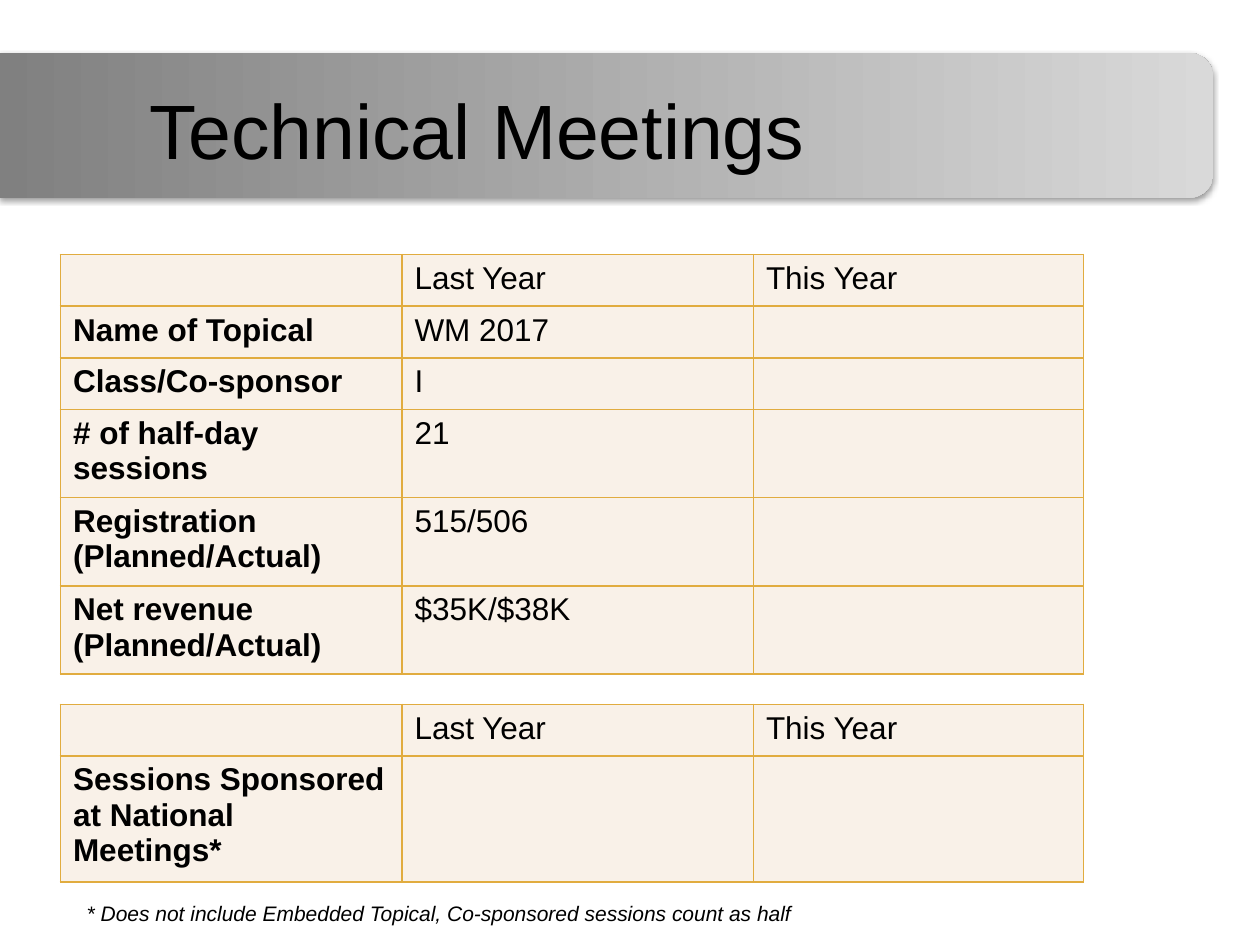
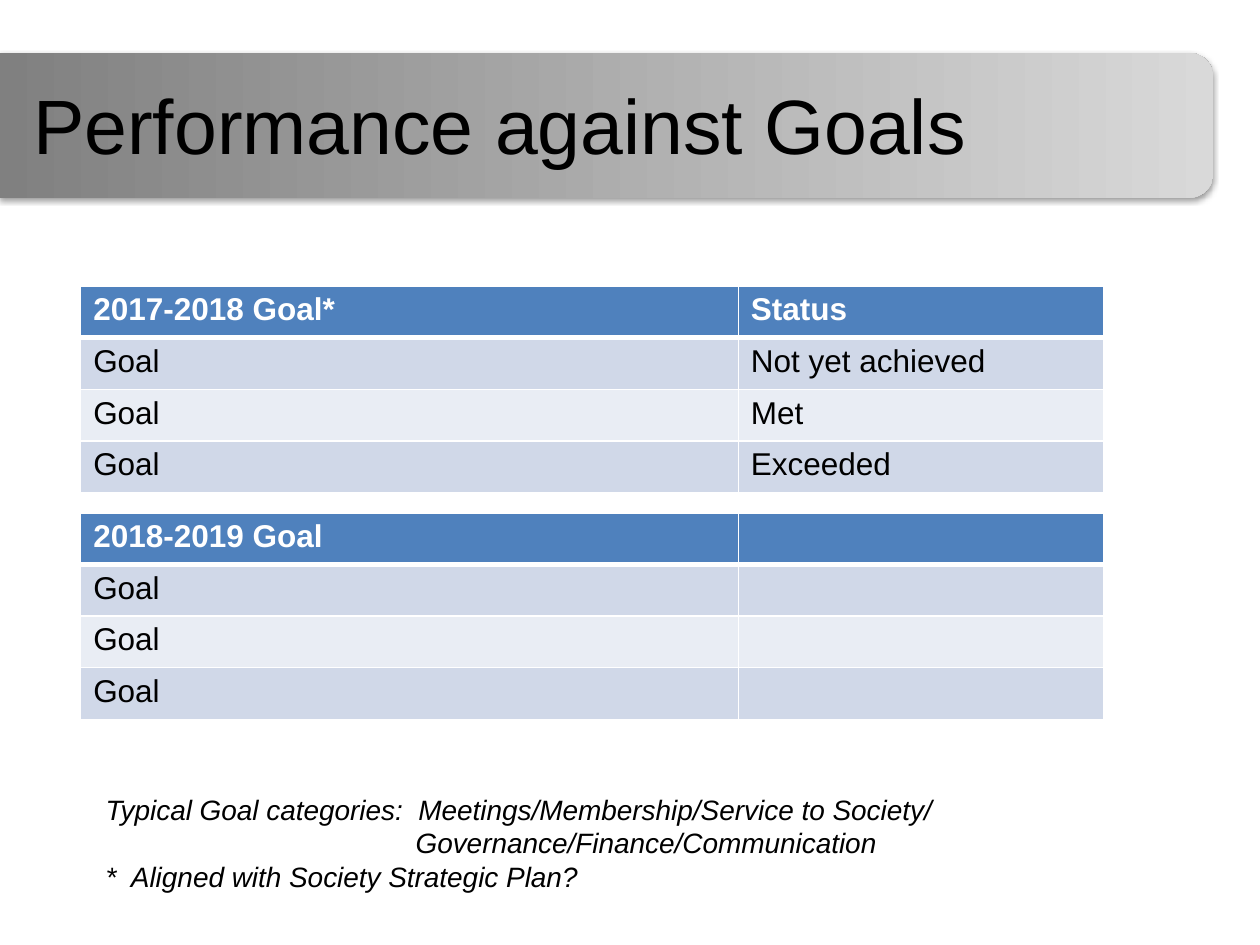
from lxml import etree
from pptx import Presentation
from pptx.dml.color import RGBColor
from pptx.enum.shapes import MSO_SHAPE
from pptx.enum.text import MSO_ANCHOR, MSO_AUTO_SIZE, PP_ALIGN
from pptx.oxml import parse_xml
from pptx.oxml.ns import nsdecls, qn
from pptx.util import Inches, Pt

COLORS = {
    "text": "000000", "white": "FFFFFF",
    "band_dark": "808080", "band_light": "D9D9D9",
    "cream": "F9F1E8", "gold": "E1AC3F",
    "header": "4F81BD", "row_odd": "D0D8E8", "row_even": "E9EDF4",
}
FONT = "Arial"
ROW_HEIGHT = 0.41


def style_text(frame, size, color="text", bold=False, italic=False):
    for paragraph in frame.paragraphs:
        for run in paragraph.runs:
            run.font.name = FONT
            run.font.size = Pt(size)
            run.font.bold = bold
            run.font.italic = italic
            run.font.color.rgb = RGBColor.from_string(COLORS[color])


def style_cell(cell, fill, border, top=1, bottom=1):
    cell.fill.solid()
    cell.fill.fore_color.rgb = RGBColor.from_string(COLORS[fill])
    properties = cell._tc.get_or_add_tcPr()
    sides = {"lnL": 1, "lnR": 1, "lnT": top, "lnB": bottom}
    for position, (side, width) in enumerate(sides.items()):
        line = etree.Element(qn(f"a:{side}"), w=str(Pt(width)))
        solid = etree.SubElement(line, qn("a:solidFill"))
        etree.SubElement(solid, qn("a:srgbClr"), val=COLORS[border])
        properties.insert(position, line)


year_header = ["", "Last Year", "This Year"]
pages = [
    {
        "title": "Technical Meetings", "title_at": (-0.71, 0.56, 9, 1.05),
        "look": "outlined", "left": 0.48, "columns": [2.71, 2.79, 2.62],
        "tables": [
            (2.02, [
                year_header,
                ["Name of Topical", "WM 2017", ""],
                ["Class/Co-sponsor", "I", ""],
                ["# of half-day sessions", "21", ""],
                ["Registration (Planned/Actual)", "515/506", ""],
                ["Net revenue (Planned/Actual)", "$35K/$38K", ""],
            ]),
            (5.59, [
                year_header,
                ["Sessions Sponsored at National Meetings*", "", ""],
            ]),
        ],
        "note_at": (0.59, 7.1, 5.84, 0.3), "note_size": 12,
        "note": [("* Does not include Embedded Topical, Co-sponsored sessions count as half", 0)],
    },
    {
        "title": "Performance against Goals", "title_at": (0, 0.52, 7.94, 1.05),
        "look": "striped", "left": 0.64, "columns": [5.22, 2.9],
        "tables": [
            (2.27, [
                ["2017-2018 Goal*", "Status"],
                ["Goal", "Not yet achieved"],
                ["Goal", "Met"],
                ["Goal", "Exceeded"],
            ]),
            (4.07, [["2018-2019 Goal", ""]] + [["Goal", ""]] * 3),
        ],
        "note_at": (0.74, 6.24, 6.85, 0.94), "note_size": 16,
        "note": [
            ("Typical Goal categories:  Meetings/Membership/Service to Society/", 0),
            ("Governance/Finance/Communication", 2.46),
            ("*  Aligned with Society Strategic Plan?", 0),
        ],
    },
]

deck = Presentation()
deck.slide_width, deck.slide_height = Inches(10), Inches(7.5)

for page in pages:
    slide = deck.slides.add_slide(deck.slide_layouts[6])

    band = slide.shapes.add_shape(
        MSO_SHAPE.ROUND_2_SAME_RECTANGLE, Inches(4.24), Inches(-3.82), Inches(1.15), Inches(9.63))
    band.rotation = 90
    band.line.fill.background()
    band.fill.gradient()
    band.fill.gradient_angle = 90
    for stop, shade in zip(band.fill.gradient_stops, ("band_dark", "band_light")):
        stop.color.rgb = RGBColor.from_string(COLORS[shade])
    band._element.spPr.append(parse_xml(
        f'<a:effectLst {nsdecls("a")}><a:outerShdw blurRad="{Pt(3.1)}" dist="{Pt(1.6)}" '
        f'dir="5400000" rotWithShape="0"><a:srgbClr val="{COLORS["text"]}">'
        '<a:alpha val="38000"/></a:srgbClr></a:outerShdw></a:effectLst>'))

    title = slide.shapes.add_textbox(*map(Inches, page["title_at"])).text_frame
    title.word_wrap = True
    title.vertical_anchor = MSO_ANCHOR.MIDDLE
    title.margin_bottom = Inches(0.17)
    title.text = page["title"]
    title.paragraphs[0].alignment = PP_ALIGN.CENTER
    style_text(title, 44)

    striped = page["look"] == "striped"
    for top, rows in page["tables"]:
        table = slide.shapes.add_table(
            len(rows), len(page["columns"]), Inches(page["left"]), Inches(top),
            Inches(sum(page["columns"])), Inches(ROW_HEIGHT * len(rows))).table
        for column, width in zip(table.columns, page["columns"]):
            column.width = Inches(width)
        for r, values in enumerate(rows):
            table.rows[r].height = Inches(ROW_HEIGHT)
            for c, value in enumerate(values):
                cell = table.cell(r, c)
                cell.text = value
                if striped:
                    fill = "header" if r == 0 else ("row_even", "row_odd")[r % 2]
                    style_cell(cell, fill, "white", 3 if r == 1 else 1, 3 if r == 0 else 1)
                    style_text(cell.text_frame, 18, "white" if r == 0 else "text", bold=r == 0)
                else:
                    style_cell(cell, "cream", "gold")
                    style_text(cell.text_frame, 18, bold=c == 0)

    note = slide.shapes.add_textbox(*map(Inches, page["note_at"])).text_frame
    note.word_wrap = False
    note.auto_size = MSO_AUTO_SIZE.SHAPE_TO_FIT_TEXT
    note.text = "\n".join(line for line, indent in page["note"])
    for paragraph, (line, indent) in zip(note.paragraphs, page["note"]):
        if indent:
            paragraph._p.get_or_add_pPr().set("marL", str(Inches(indent)))
    style_text(note, page["note_size"], italic=True)

deck.save("out.pptx")
